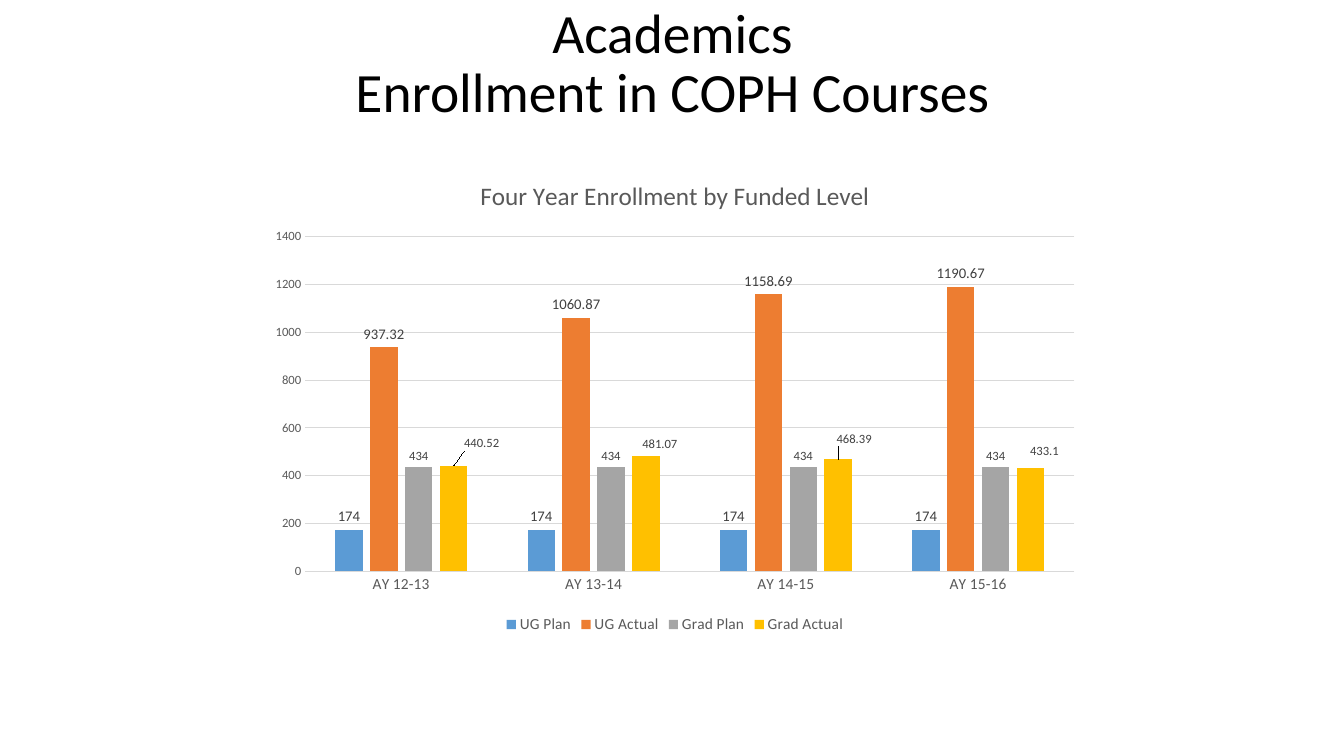
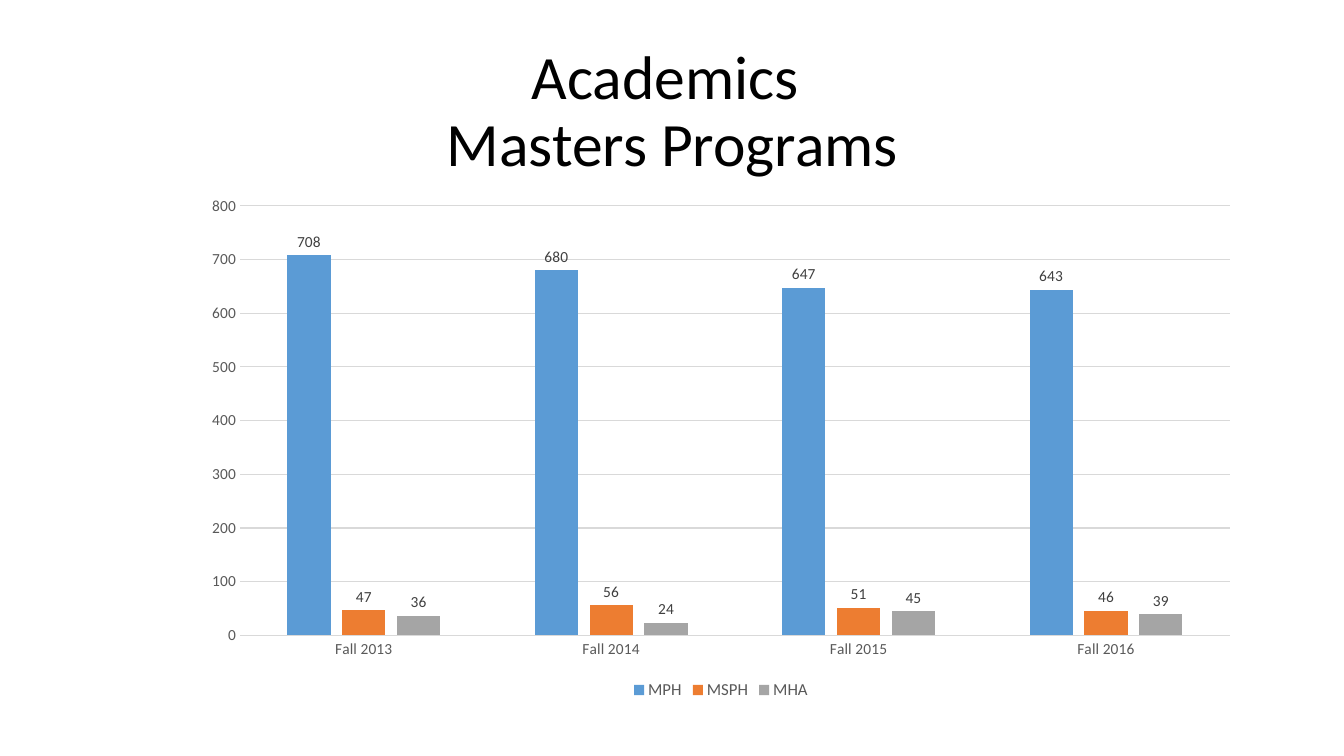
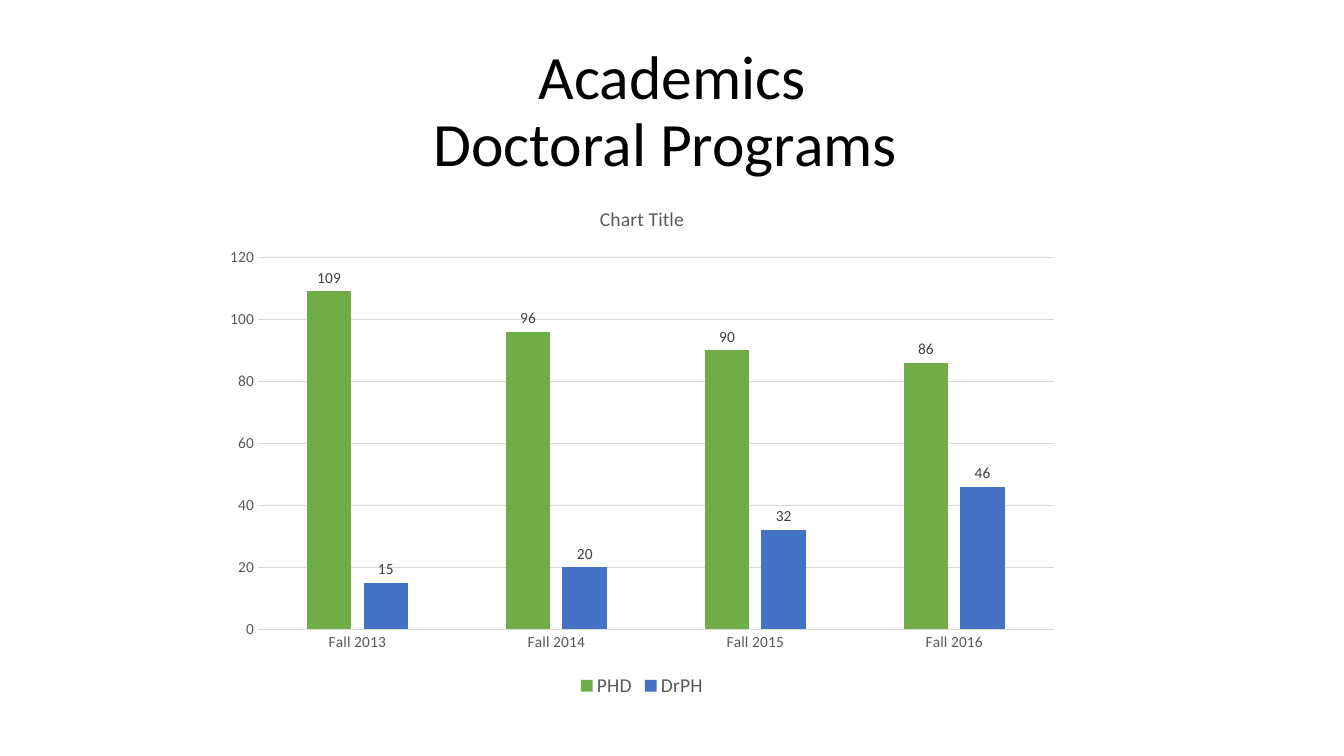
from lxml.etree import SubElement
from pptx import Presentation
from pptx.chart.data import CategoryChartData
from pptx.dml.color import RGBColor
from pptx.enum.chart import XL_CHART_TYPE, XL_LABEL_POSITION, XL_LEGEND_POSITION, XL_TICK_MARK
from pptx.enum.text import MSO_ANCHOR, MSO_AUTO_SIZE, PP_ALIGN
from pptx.oxml.ns import qn
from pptx.util import Emu, Pt

SLIDE_W, SLIDE_H = 1344, 756
PX = 12192000 / SLIDE_W
FONT = "Calibri"
BLACK, GREY, LABEL_GREY, GRID_GREY = "000000", "595959", "404040", "D9D9D9"
BLUE, ORANGE, SILVER, GOLD = "5B9BD5", "ED7D31", "A5A5A5", "FFC000"
GREEN, ROYAL = "70AD47", "4472C4"
FALLS = ["Fall 2013", "Fall 2014", "Fall 2015", "Fall 2016"]


def style_font(font, size, color):
    font.name, font.size, font.bold = FONT, Pt(size), False
    font.color.rgb = RGBColor.from_string(color)


def write_text(frame, text, size=44, color=BLACK, align=PP_ALIGN.CENTER, spacing=None):
    """Fill the first paragraph; a newline becomes a line break of the same size."""
    paragraph = frame.paragraphs[0]
    paragraph.text = text
    paragraph.alignment = align
    paragraph.line_spacing = spacing
    for run in paragraph.runs:
        style_font(run.font, size, color)
    for line_break in paragraph._p.findall(qn("a:br")):
        SubElement(line_break, qn("a:rPr"), sz=str(round(size * 100)))


# Series: name, values, colour, label size, label shifts in px (one per point)
slides = [
    dict(title="Academics\nEnrollment in COPH Courses", title_size=39.6,
         title_height=110, title_lift=60, box=(259, 159, 832, 479),
         caption="Four Year Enrollment by Funded Level", caption_size=18,
         value_size=9, legend_size=11,
         categories=["AY 12-13", "AY 13-14", "AY 14-15", "AY 15-16"],
         series=[
             ("UG Plan", [174] * 4, BLUE, 10.5, []),
             ("UG Actual", [937.32, 1060.87, 1158.69, 1190.67], ORANGE, 10.5, []),
             ("Grad Plan", [434] * 4, SILVER, 9, []),
             ("Grad Actual", [440.52, 481.07, 468.39, 433.1], GOLD, 9,
              [(28, -11), (14, -1), (16, -9), (14, -5)]),
         ]),
    dict(title="Academics \nMasters Programs", title_size=44,
         title_height=146, title_lift=0, box=(191, 186, 1060, 518),
         caption=None, caption_size=None, value_size=11, legend_size=12,
         categories=FALLS,
         series=[
             ("MPH", [708, 680, 647, 643], BLUE, 11, []),
             ("MSPH", [47, 56, 51, 46], ORANGE, 11, []),
             ("MHA", [36, 24, 45, 39], SILVER, 11, []),
         ]),
    dict(title="Academics\nDoctoral Programs ", title_size=44,
         title_height=146, title_lift=0, box=(213, 186, 858, 516),
         caption="Chart Title", caption_size=14, value_size=11, legend_size=14,
         categories=FALLS,
         series=[
             ("PHD", [109, 96, 90, 86], GREEN, 11, []),
             ("DrPH", [15, 20, 32, 46], ROYAL, 11, []),
         ]),
]

deck = Presentation()
deck.slide_width, deck.slide_height = round(SLIDE_W * PX), round(SLIDE_H * PX)

for content in slides:
    slide = deck.slides.add_slide(deck.slide_layouts[5])

    title = slide.shapes.title
    title.left, title.top, title.width, title.height = (
        Emu(round(n * PX)) for n in (93, 40, 1159, content["title_height"]))
    heading = title.text_frame
    heading.word_wrap = True
    heading.auto_size = MSO_AUTO_SIZE.NONE
    heading.vertical_anchor = MSO_ANCHOR.MIDDLE
    heading.margin_bottom = round((5 + content["title_lift"]) * PX)
    heading.margin_top = round(5 * PX)
    write_text(heading, content["title"], size=content["title_size"], spacing=0.9)

    enrollment = CategoryChartData()
    enrollment.categories = content["categories"]
    for name, values, *_ in content["series"]:
        enrollment.add_series(name, values)
    box = [Emu(round(n * PX)) for n in content["box"]]
    chart = slide.shapes.add_chart(XL_CHART_TYPE.COLUMN_CLUSTERED, *box, enrollment).chart
    style_font(chart.font, 10, BLACK)

    chart.has_title = content["caption"] is not None
    if chart.has_title:
        write_text(chart.chart_title.text_frame, content["caption"],
                   size=content["caption_size"], color=GREY)
        chart.chart_title.include_in_layout = False

    chart.has_legend = True
    chart.legend.position = XL_LEGEND_POSITION.BOTTOM
    chart.legend.include_in_layout = False
    style_font(chart.legend.font, content["legend_size"], GREY)

    years, counts = chart.category_axis, chart.value_axis
    for axis, size in ((years, 11), (counts, content["value_size"])):
        axis.major_tick_mark = axis.minor_tick_mark = XL_TICK_MARK.NONE
        style_font(axis.tick_labels.font, size, GREY)
    counts.has_major_gridlines = True
    counts.format.line.fill.background()
    for line in (years.format.line, counts.major_gridlines.format.line):
        line.color.rgb = RGBColor.from_string(GRID_GREY)
        line.width = Pt(0.75)

    plot = chart.plots[0]
    plot.gap_width, plot.overlap, plot.vary_by_categories = 219, -27, False
    for bars, (_, _, color, label_size, shifts) in zip(plot.series, content["series"]):
        bars.format.fill.solid()
        bars.format.fill.fore_color.rgb = RGBColor.from_string(color)
        labels = bars.data_labels
        labels.show_value = True
        labels.position = XL_LABEL_POSITION.OUTSIDE_END
        style_font(labels.font, label_size, LABEL_GREY)
        for index, (dx, dy) in enumerate(shifts):
            label = bars.points[index].data_label
            style_font(label.font, label_size, LABEL_GREY)
            label.position = XL_LABEL_POSITION.OUTSIDE_END
            entry = label._get_or_add_dLbl()
            layout = SubElement(entry, qn("c:layout"))
            entry.insert(1, layout)
            manual = SubElement(layout, qn("c:manualLayout"))
            for axis_name, part in (("x", dx / content["box"][2]), ("y", dy / content["box"][3])):
                SubElement(manual, qn(f"c:{axis_name}"), val=f"{part:.4f}")

deck.save("out.pptx")
